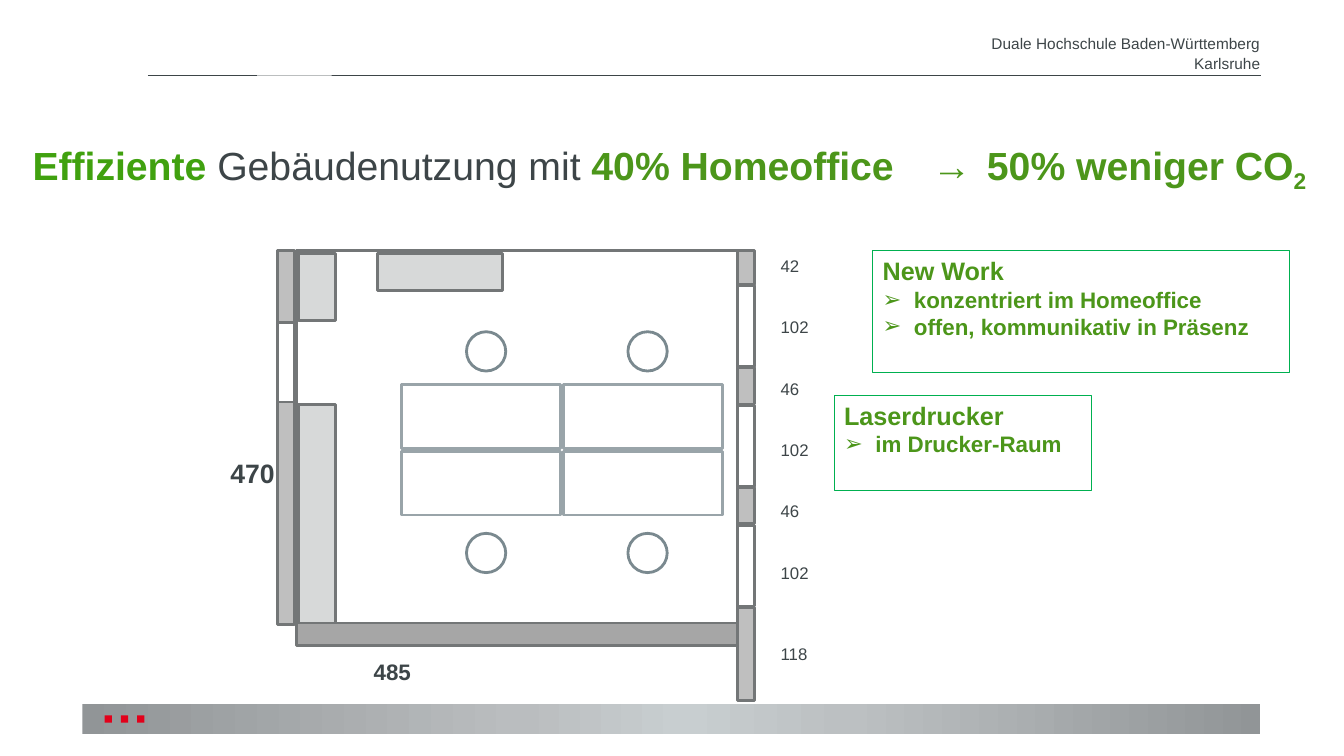
from dataclasses import dataclass
from typing import Optional

from lxml.etree import SubElement
from pptx import Presentation
from pptx.dml.color import RGBColor
from pptx.enum.shapes import MSO_CONNECTOR, MSO_SHAPE as Preset
from pptx.enum.text import MSO_ANCHOR as Anchor, MSO_AUTO_SIZE as AutoSize, PP_ALIGN as Align
from pptx.oxml.ns import qn
from pptx.util import Cm, Pt

DARK, GREEN, BRIGHT_GREEN, BOX_GREEN = "3D4548", "4C961A", "40A10F", "00B050"
OUTLINE, DESK_LINE, CHAIR_LINE = "737677", "99A4A9", "7A898F"
WALL, SOUTH_WALL, CABINET = "BFBFBF", "A6A6A6", "D7D9D9"
WALL_WIDTH, ROOM_LEFT, ROOM_TOP, ROOM_WIDTH = 0.43, 7.47, 6.32, 11.13


@dataclass
class Block:
    left: float
    top: float
    width: float
    height: float
    fill: Optional[str] = None
    line: Optional[str] = OUTLINE
    weight: float = 2
    preset: Preset = Preset.FLOWCHART_PROCESS


@dataclass
class Segment:
    height: float
    fill: Optional[str] = None


@dataclass
class Note:
    block: Block
    heading: str
    points: list[str]


def rgb(color: str) -> RGBColor:
    return RGBColor.from_string(color)


def draw(block: Block):
    shape = slide.shapes.add_shape(
        block.preset, Cm(block.left), Cm(block.top), Cm(block.width), Cm(block.height))
    shape.shadow.inherit = False
    if block.fill:
        shape.fill.solid()
        shape.fill.fore_color.rgb = rgb(block.fill)
    else:
        shape.fill.background()
    if block.line:
        shape.line.color.rgb = rgb(block.line)
        shape.line.width = Pt(block.weight)
    else:
        shape.line.fill.background()
    return shape


def add_run(paragraph, text: str, size: float, color: str = DARK, bold: bool = False):
    run = paragraph.add_run()
    run.text = text
    run.font.name = "Arial"
    run.font.size = Pt(size)
    run.font.bold = bold
    run.font.color.rgb = rgb(color)
    return run


def next_paragraph(frame, first: bool):
    return frame.paragraphs[0] if first else frame.add_paragraph()


def clear_margins(frame) -> None:
    frame.margin_left = frame.margin_right = frame.margin_top = frame.margin_bottom = 0


def add_text_box(left: float, top: float, width: float, height: float, wrap: bool = False):
    frame = slide.shapes.add_textbox(Cm(left), Cm(top), Cm(width), Cm(height)).text_frame
    frame.word_wrap = wrap
    return frame


def draw_wall(left: float, segments: list[Segment], gap: float) -> None:
    top = ROOM_TOP
    for segment in segments:
        draw(Block(left, top, WALL_WIDTH, segment.height, segment.fill))
        top += segment.height + gap


def draw_note(note: Note) -> None:
    frame = draw(note.block).text_frame
    frame.word_wrap = True
    frame.vertical_anchor = Anchor.TOP
    heading = frame.paragraphs[0]
    heading.alignment = Align.LEFT
    add_run(heading, note.heading, 18, GREEN, True)
    for point in note.points:
        paragraph = frame.add_paragraph()
        paragraph.alignment = Align.LEFT
        properties = paragraph._p.get_or_add_pPr()
        properties.set("marL", str(Cm(0.79)))
        properties.set("indent", str(-Cm(0.79)))
        SubElement(properties, qn("a:buFont"), typeface="Arial")
        SubElement(properties, qn("a:buChar"), char="➢")
        add_run(paragraph, point, 16, GREEN, True)


presentation = Presentation()
presentation.slide_width, presentation.slide_height = Cm(33.88), Cm(19.05)
slide = presentation.slides.add_slide(presentation.slide_layouts[5])

# Header
header = add_text_box(10.21, 0.84, 21.56, 0.91, wrap=True)
clear_margins(header)
for index, text in enumerate(["Duale Hochschule Baden-Württemberg", "Karlsruhe"]):
    paragraph = next_paragraph(header, index == 0)
    paragraph.alignment = Align.RIGHT
    paragraph.line_spacing = 1.07
    add_run(paragraph, text, 11)
rule = slide.shapes.add_connector(MSO_CONNECTOR.STRAIGHT, Cm(3.73), Cm(1.9), Cm(31.78), Cm(1.9))
rule.line.color.rgb = rgb(DARK)
rule.line.width = Pt(0.25)
SubElement(rule._element.spPr, qn("a:effectLst"))
draw(Block(6.48, 0.56, 1.88, 1.35, "FFFFFF", None, preset=Preset.RECTANGLE))

# Footer band with three red squares
band = draw(Block(2.08, 17.75, 29.69, 0.74, line=None, preset=Preset.RECTANGLE))
band.fill.gradient()
band.fill.gradient_angle = 0
stops = band._element.spPr.find(qn("a:gradFill")).find(qn("a:gsLst"))
stops.clear()
for position, color in [(0, "919597"), (37, "BABDBF"), (51, "C8CED0"),
                        (65, "BCC0C2"), (100, "919597")]:
    stop = SubElement(stops, qn("a:gs"), pos=str(position * 1000))
    SubElement(stop, qn("a:srgbClr"), val=color)
for index in range(3):
    draw(Block(2.64 + 0.41 * index, 18.03, 0.18, 0.18, "E2001A", None, preset=Preset.RECTANGLE))

# Title
title = slide.shapes.title
title.left, title.top, title.width, title.height = Cm(0.82), Cm(3.5), Cm(32.3), Cm(1.4)
frame = title.text_frame
clear_margins(frame)
frame.auto_size = AutoSize.NONE
frame.vertical_anchor = Anchor.BOTTOM
paragraph = frame.paragraphs[0]
paragraph.alignment = Align.LEFT
tabs = SubElement(paragraph._p.get_or_add_pPr(), qn("a:tabLst"))
for position in (22.68, 24.06):
    SubElement(tabs, qn("a:tab"), pos=str(Cm(position)), algn="l")
add_run(paragraph, "Effiziente", 28, BRIGHT_GREEN, True)
add_run(paragraph, " Gebäudenutzung mit ", 28)
add_run(paragraph, "40% Homeoffice\t→\t50% weniger CO", 28, GREEN, True)
subscript = add_run(paragraph, "2", 28, GREEN, True)
subscript._r.get_or_add_rPr().set("baseline", "-25000")

# Room and walls
draw(Block(ROOM_LEFT, ROOM_TOP, ROOM_WIDTH, 9.4))
window, pillar = Segment(2.03), Segment(0.91, WALL)
draw_wall(18.59, [Segment(0.84, WALL), window, pillar, window, pillar, window,
                  Segment(2.34, WALL)], gap=0.04)
draw_wall(6.99, [Segment(1.8, WALL), Segment(2.01), Segment(5.61, WALL)], gap=0)

# Cabinets and lower wall
for block in [Block(7.52, 10.19, 0.94, 5.51, CABINET),
              Block(7.52, 6.38, 0.94, 1.7, CABINET),
              Block(9.51, 6.39, 3.15, 0.94, CABINET),
              Block(ROOM_LEFT, 15.7, ROOM_WIDTH, 0.56, SOUTH_WALL)]:
    draw(block)

# Desks and chairs
for desk_left in (10.13, 14.2):
    for desk_top, chair_top in ((9.7, 8.36), (11.38, 13.44)):
        draw(Block(desk_left, desk_top, 4.01, 1.6, line=DESK_LINE))
        draw(Block(desk_left + 1.63, chair_top, 0.99, 0.99,
                   line=CHAIR_LINE, preset=Preset.OVAL))

# Dimensions
lengths = add_text_box(19.43, 6.32, 1.22, 10.52)
for index, length in enumerate(["42", "102", "46", "102", "46", "102", "118"]):
    paragraph = next_paragraph(lengths, index == 0)
    if index:
        paragraph.space_before = Pt(43.8 if length == "118" else 29.4)
    add_run(paragraph, length, 12)
add_run(add_text_box(5.56, 11.4, 1.65, 1.07).paragraphs[0], "470", 19, bold=True)
add_run(add_text_box(9.17, 16.46, 1.47, 0.94).paragraphs[0], "485", 16, bold=True)

# Notes
for note in [
    Note(Block(21.03, 9.96, 6.48, 2.39, None, BOX_GREEN, 0.75, Preset.RECTANGLE),
         "Laserdrucker", ["im Drucker-Raum"]),
    Note(Block(22, 6.32, 10.52, 3.07, None, BOX_GREEN, 0.75, Preset.RECTANGLE),
         "New Work", ["konzentriert im Homeoffice", "offen, kommunikativ in Präsenz"]),
]:
    draw_note(note)

presentation.save("out.pptx")
